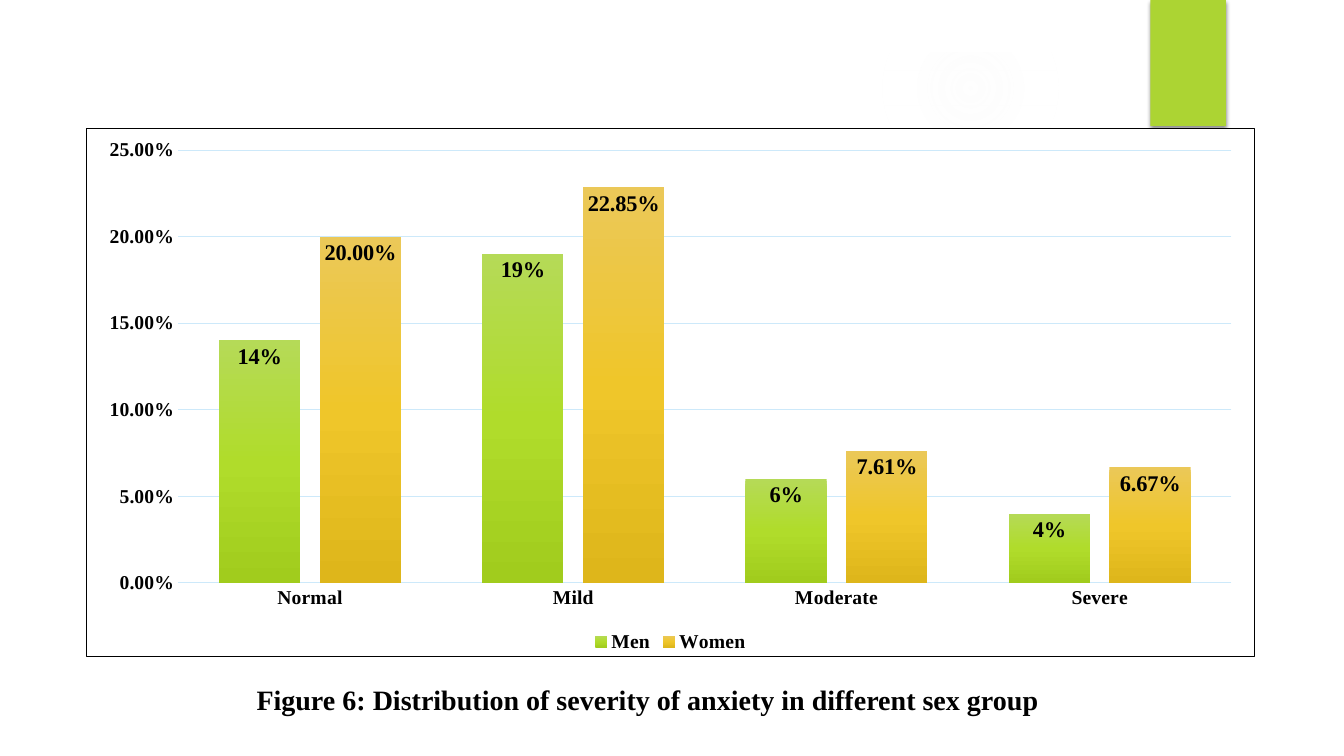
import pptx
import pptx.chart.data
import pptx.dml.color
import pptx.enum.chart
import pptx.enum.shapes
import pptx.enum.text
import pptx.oxml
import pptx.oxml.ns
import pptx.util
from pptx.util import Inches

FACE = "Times New Roman"
NS = pptx.oxml.ns.nsdecls("a", "c")
qn = pptx.oxml.ns.qn


def paint(target, color):
    """Give a fill or line format a solid colour."""
    fill = getattr(target, "fill", target)
    fill.solid()
    fill.fore_color.rgb = pptx.dml.color.RGBColor.from_string(color)


def style(font, size):
    font.name = FACE
    font.size = pptx.util.Pt(size)
    font.bold = True
    paint(font, "000000")


prs = pptx.Presentation()
prs.slide_width = Inches(13.33)
prs.slide_height = Inches(7.5)
slide = prs.slides.add_slide(prs.slide_layouts[6])
shapes = slide.shapes
paint(slide.background, "FFFFFF")

# Faint glow, cut off by a white panel with a curved top and a white frame
glow = shapes.add_shape(pptx.enum.shapes.MSO_SHAPE.OVAL,
                        Inches(8.75), 0, Inches(1.75), Inches(1.75))
pen = shapes.build_freeform(50, 204, Inches(0.01))
pen.add_line_segments([(50, 700), (1284, 700), (1284, 204), (1172, 220),
                       (1060, 232), (949, 241), (840, 246), (708, 248),
                       (583, 247), (488, 243), (360, 236), (249, 227),
                       (159, 218), (94, 210)])
panel = pen.convert_to_shape()
pen = shapes.build_freeform(0, 0, Inches(0.01))
pen.add_line_segments([(0, 750), (1333, 750), (1333, 0)])
pen.move_to(1281, 698)
pen.add_line_segments([(52, 698), (52, 52), (1281, 52)])
border = pen.convert_to_shape()
tab = shapes.add_shape(pptx.enum.shapes.MSO_SHAPE.RECTANGLE,
                       Inches(11.41), 0, Inches(0.75), Inches(1.25))
for shape, color in ((glow, "F7F7F7"), (panel, "FFFFFF"),
                     (border, "FFFFFF"), (tab, "ACD433")):
    shape.shadow.inherit = False
    paint(shape.fill, color)
    shape.line.fill.background()

fades = "".join(
    f'<a:gs pos="{at}000"><a:srgbClr val="F7F7F7"><a:alpha val="{alpha}000"/></a:srgbClr></a:gs>'
    for at, alpha in ((0, 14), (36, 7), (73, 0)))
solid = glow._element.spPr.find(qn("a:solidFill"))
solid.addnext(pptx.oxml.parse_xml(
    f'<a:gradFill {NS}><a:gsLst>{fades}</a:gsLst><a:path path="circle">'
    '<a:fillToRect l="50000" t="50000" r="50000" b="50000"/></a:path></a:gradFill>'))
glow._element.spPr.remove(solid)
shade = tab._element.spPr.find(qn("a:effectLst"))
shade.append(pptx.oxml.parse_xml(
    f'<a:outerShdw {NS} blurRad="38100" dist="25400" dir="5400000" rotWithShape="0">'
    '<a:srgbClr val="000000"><a:alpha val="45000"/></a:srgbClr></a:outerShdw>'))

# Chart
data = pptx.chart.data.CategoryChartData()
data.categories = ["Normal", "Mild", "Moderate", "Severe"]
data.add_series("Men", (0.14, 0.19, 0.06, 0.04), "0%")
data.add_series("Women", (0.2, 0.2285, 0.0761, 0.0667), "0.00%")
chart = shapes.add_chart(pptx.enum.chart.XL_CHART_TYPE.COLUMN_CLUSTERED,
                         Inches(0.85), Inches(1.27), Inches(11.6), Inches(5.25),
                         data).chart
style(chart.font, 14)
chart.has_title = False
chart.has_legend = True
chart.legend.position = pptx.enum.chart.XL_LEGEND_POSITION.BOTTOM
chart.legend.include_in_layout = False
style(chart.legend.font, 14)

frame = pptx.oxml.parse_xml(
    f'<c:spPr {NS}><a:solidFill><a:srgbClr val="FFFFFF"/></a:solidFill>'
    '<a:ln w="9525"><a:solidFill><a:srgbClr val="000000"/></a:solidFill></a:ln></c:spPr>')
chart._chartSpace.find(qn("c:chart")).addnext(frame)

cats, vals = chart.category_axis, chart.value_axis
for axis in (cats, vals):
    axis.major_tick_mark = pptx.enum.chart.XL_TICK_MARK.NONE
    style(axis.tick_labels.font, 14)
vals.minimum_scale = 0
vals.maximum_scale = 0.25
vals.major_unit = 0.05
vals.tick_labels.number_format = "0.00%"
vals.tick_labels.number_format_is_linked = False
vals.format.line.fill.background()
for line in (cats.format.line, vals.major_gridlines.format.line):
    paint(line, "CDE9FA")
    line.width = pptx.util.Pt(0.75)

plot = chart.plots[0]
plot.gap_width = 100
plot.overlap = -24
plot.vary_by_categories = False
looks = (("0%", ("B5DA57", "B0DC2B", "A1CC1D")),
         ("0.00%", ("EBC858", "EFC62A", "DEB61B")))
for series, (form, tones) in zip(plot.series, looks):
    fill = series.format.fill
    fill.gradient()
    fill.gradient_angle = 270
    stops = series._element.find(".//" + qn("a:gsLst"))
    for stop in list(stops):
        stops.remove(stop)
    for i, tone in enumerate(tones):
        stops.append(pptx.oxml.parse_xml(
            f'<a:gs {NS} pos="{i * 50000}"><a:srgbClr val="{tone}"/></a:gs>'))
    labels = series.data_labels
    labels.show_value = True
    labels.position = pptx.enum.chart.XL_LABEL_POSITION.INSIDE_END
    labels.number_format = form
    labels.number_format_is_linked = False
    style(labels.font, 16)

# Caption
box = shapes.add_textbox(Inches(1.49), Inches(6.39), Inches(9.94), Inches(0.68))
box.text_frame.word_wrap = True
para = box.text_frame.paragraphs[0]
para.text = "Figure 6: Distribution of severity of anxiety in different sex group "
para.alignment = pptx.enum.text.PP_ALIGN.CENTER
para.line_spacing = 2.0
para.space_after = pptx.util.Pt(8)
style(para.runs[0].font, 20)

prs.save("out.pptx")
